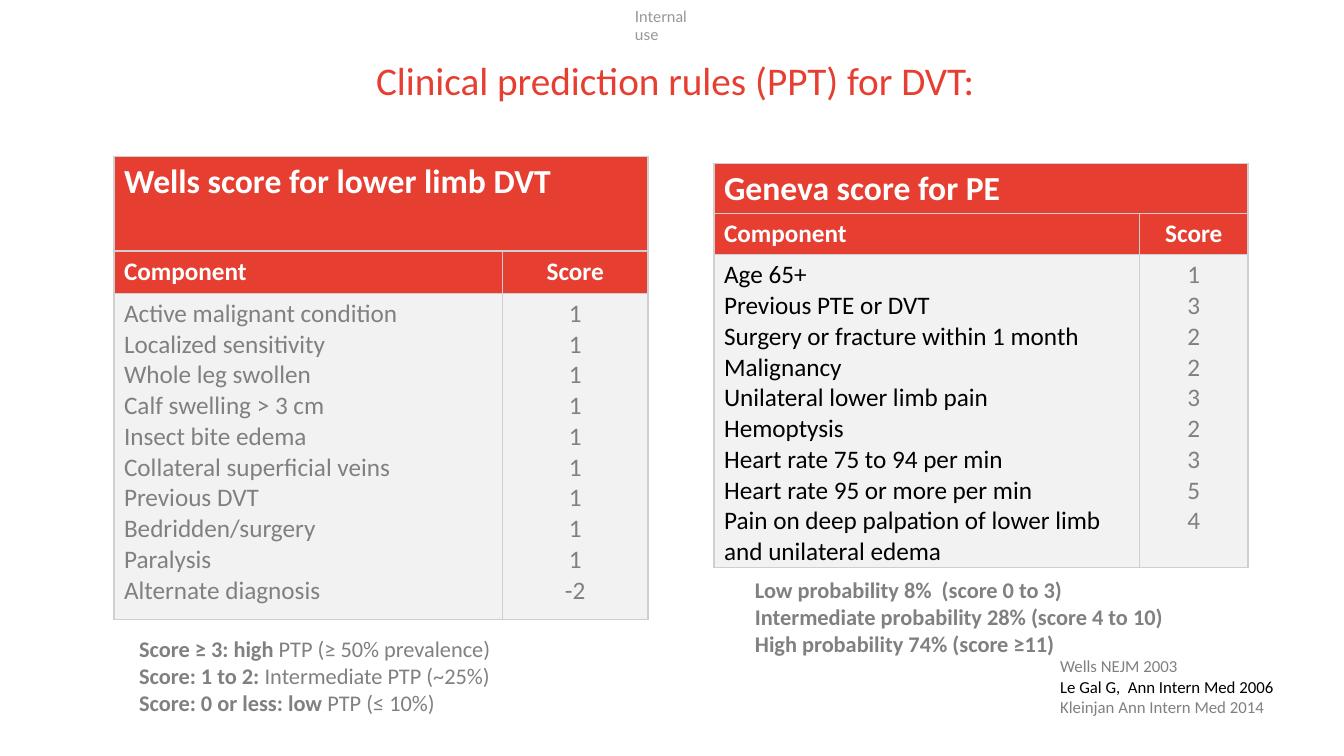
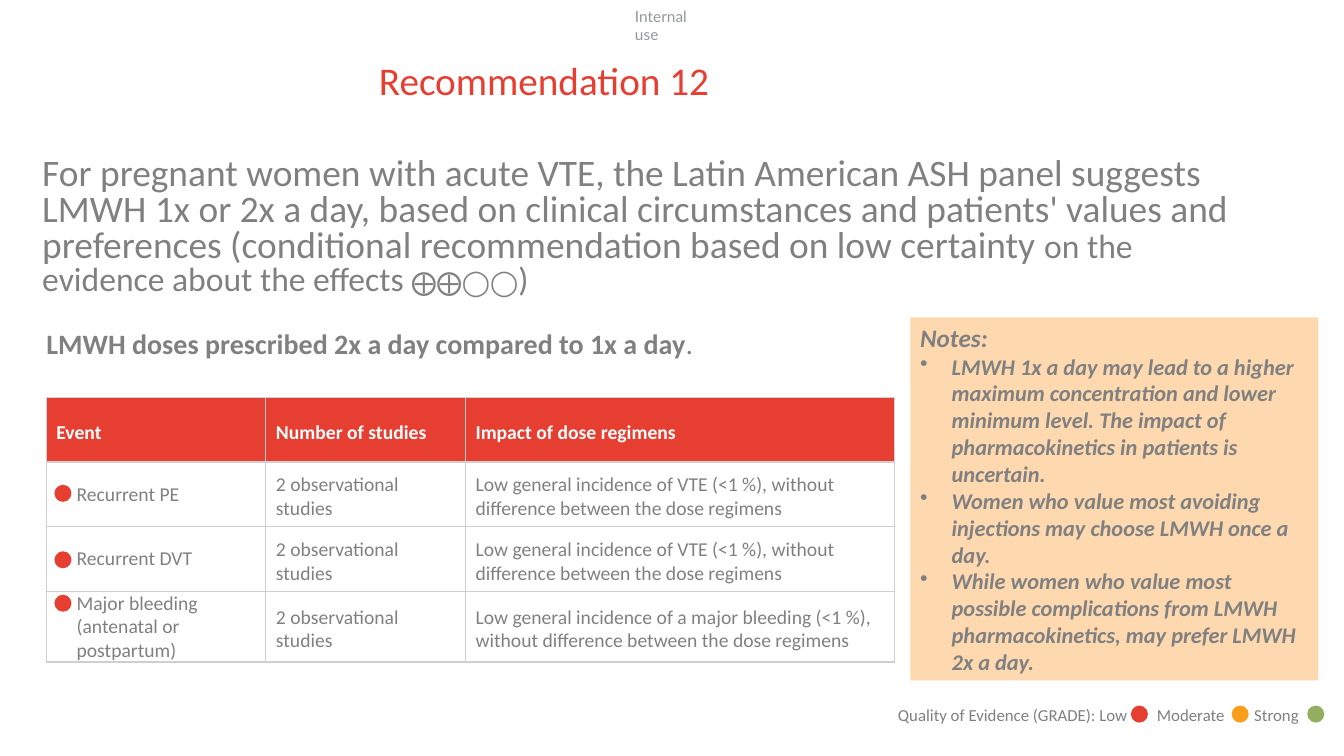
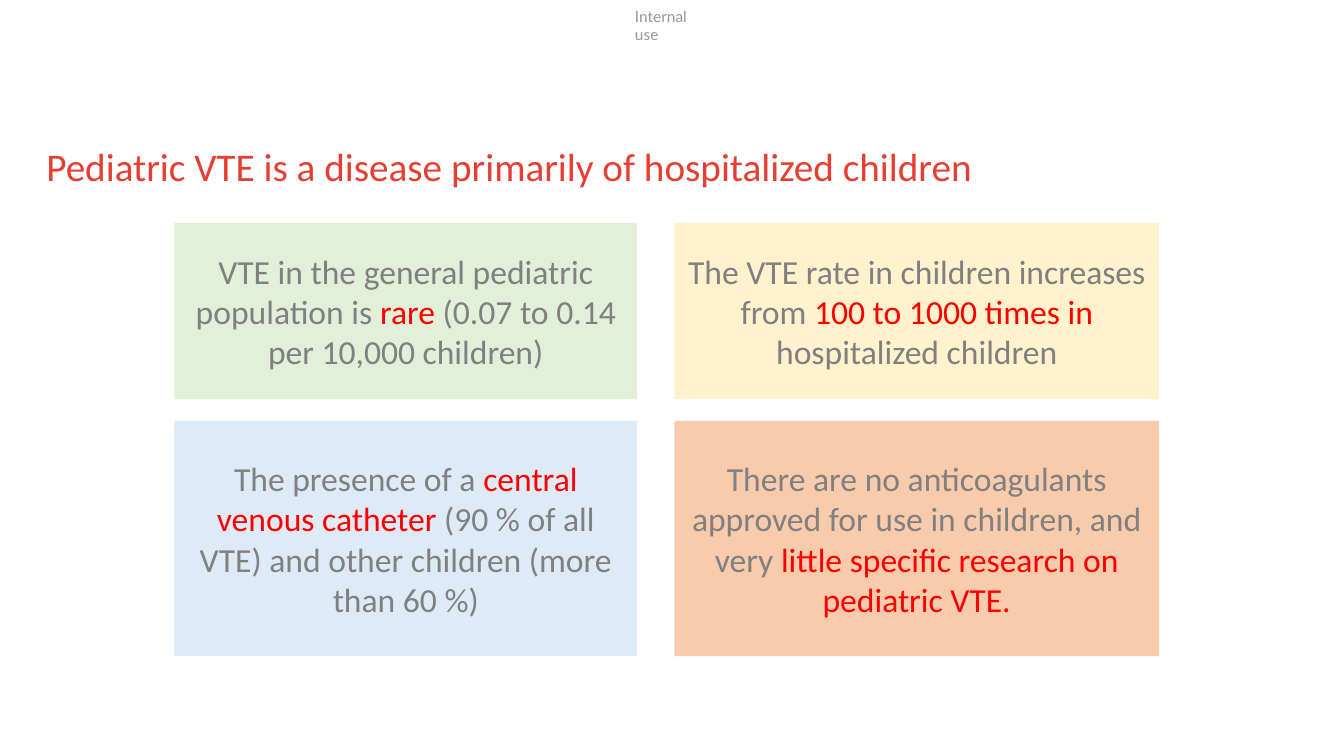
import dataclasses

import pptx
import pptx.dml.color
import pptx.enum.shapes
import pptx.enum.text
import pptx.oxml
import pptx.oxml.ns
import pptx.util

Pt = pptx.util.Pt
RGB = pptx.dml.color.RGBColor.from_string
ALIGN = pptx.enum.text.PP_ALIGN
ANCHOR = pptx.enum.text.MSO_ANCHOR
SHAPE = pptx.enum.shapes.MSO_SHAPE
NO_FIT = pptx.enum.text.MSO_AUTO_SIZE.NONE


# Theme: colours and type sizes
@dataclasses.dataclass(frozen=True)
class Theme:
    font: str = "Calibri"
    label_font: str = "Lato"
    red: str = "E63E31"
    grey: str = "808080"
    black: str = "000000"
    white: str = "FFFFFF"
    label_grey: str = "93979B"
    border: str = "D0CECE"
    panel: str = "F2F2F2"
    note: str = "FED9B0"
    accent: str = "FF0000"
    amber: str = "F99D1C"
    green: str = "91AF5F"
    mint: str = "E2F0D9"
    cream: str = "FFF2CC"
    sky: str = "DEEBF7"
    peach: str = "F8CBAD"
    label: float = 11
    small: float = 12
    cell: float = 14
    body: float = 16
    large: float = 18
    subhead: float = 20
    heading: float = 24
    lead: float = 26.7
    title: float = 28


THEME = Theme()
FLUSH = (0, 0, 0, 0)
INSET = (7.2, 3.6, 7.2, 3.6)
CELL_INSET = (7.2, 3.6, 7.2, 0)
DOT = 12.2


# Text
def set_format(target, values):
    for name, value in values.items():
        if name == "color":
            target.color.rgb = RGB(value)
        else:
            setattr(target, name, value)


def font(size, color=THEME.grey, **extra):
    return {"name": THEME.font, "size": Pt(size), "color": color, **extra}


def add_spans(para, spans, base):
    """Spans are plain strings or (string, format changes) pairs."""
    for item in [spans] if isinstance(spans, str) else spans:
        words, changes = (item, {}) if isinstance(item, str) else item
        span = para.add_run()
        span.text = words
        set_format(span.font, {**base, **changes})


def write(frame, paras, base, **para_format):
    for index, spans in enumerate(paras):
        para = frame.add_paragraph() if index else frame.paragraphs[0]
        set_format(para, para_format)
        add_spans(para, spans, base)


def set_insets(target, insets):
    sides = ("margin_left", "margin_top", "margin_right", "margin_bottom")
    set_format(target, dict(zip(sides, map(Pt, insets))))


def add_bullet(para, indent):
    properties = para._p.get_or_add_pPr()
    properties.set("marL", str(Pt(indent)))
    properties.set("indent", str(-Pt(indent)))
    bullet = pptx.oxml.parse_xml(
        f'<a:buChar {pptx.oxml.ns.nsdecls("a")} char="•"/>')
    properties.append(bullet)


def add_tabs(para, stops):
    tabs = "".join(f'<a:tab pos="{Pt(stop)}" algn="l"/>' for stop in stops)
    para._p.get_or_add_pPr().append(pptx.oxml.parse_xml(
        f'<a:tabLst {pptx.oxml.ns.nsdecls("a")}>{tabs}</a:tabLst>'))


# Elements
def add_text(page, place, paras, base, insets=FLUSH, **para_format):
    box = page.shapes.add_textbox(*map(Pt, place))
    box.text_frame.word_wrap = True
    set_insets(box.text_frame, insets)
    write(box.text_frame, paras, base, **para_format)
    return box


def add_title(page, place, words):
    title = page.shapes.title
    names = ("left", "top", "width", "height")
    set_format(title, dict(zip(names, map(Pt, place))))
    frame = title.text_frame
    set_format(frame, {"word_wrap": True, "auto_size": NO_FIT,
                       "vertical_anchor": ANCHOR.TOP})
    set_insets(frame, FLUSH)
    write(frame, [words], font(THEME.title, THEME.red),
          alignment=ALIGN.LEFT, line_spacing=0.9)


def add_block(page, kind, place, color):
    block = page.shapes.add_shape(kind, *map(Pt, place))
    block.shadow.inherit = False
    block.fill.solid()
    block.fill.fore_color.rgb = RGB(color)
    block.line.fill.background()
    block.text_frame.word_wrap = True
    return block


def add_dot(page, left, top, color):
    add_block(page, SHAPE.OVAL, (left, top, DOT, DOT), color)


def add_table(page, left, top, widths, heights):
    table = page.shapes.add_table(
        len(heights), len(widths), Pt(left), Pt(top),
        Pt(sum(widths)), Pt(sum(heights))).table
    set_format(table, {"first_row": False, "horz_banding": False})
    for column, width in zip(table.columns, widths):
        column.width = Pt(width)
    for row, height in zip(table.rows, heights):
        row.height = Pt(height)
    return table


def fill_cell(cell, paras, base, color=None, insets=CELL_INSET,
              anchor=ANCHOR.TOP, **para_format):
    properties = cell._tc.get_or_add_tcPr()
    for side in "LRTB":
        properties.append(pptx.oxml.parse_xml(
            f'<a:ln{side} {pptx.oxml.ns.nsdecls("a")} w="{Pt(1)}">'
            f'<a:solidFill><a:srgbClr val="{THEME.border}"/></a:solidFill>'
            f'</a:ln{side}>'))
    if color:
        cell.fill.solid()
        cell.fill.fore_color.rgb = RGB(color)
    else:
        cell.fill.background()
    set_insets(cell, insets)
    cell.vertical_anchor = anchor
    write(cell.text_frame, paras, base, **para_format)


def add_score_table(page, place, widths, heights, name, scores, color):
    table = add_table(page, *place, widths, heights)
    head = font(THEME.large, THEME.white, bold=True)
    top = table.cell(0, 0)
    top.merge(table.cell(0, 1))
    fill_cell(top, [name], {**head, "size": Pt(THEME.heading)}, THEME.red)
    columns = (("Component", [row[0] for row in scores], color, ALIGN.LEFT),
               ("Score", [row[1] for row in scores], THEME.grey, ALIGN.CENTER))
    for index, (label, values, ink, align) in enumerate(columns):
        fill_cell(table.cell(1, index), [label], head, THEME.red,
                  alignment=align)
        fill_cell(table.cell(2, index), values, font(THEME.large, ink),
                  THEME.panel, alignment=align)


def add_layout_label(page):
    """Put the classification label on the layout that all pages share."""
    base = {**font(THEME.label, THEME.label_grey), "name": THEME.label_font}
    label = add_text(page, (453.6, 5, 50, 28), ["Internal use"], base).element
    label.nvSpPr.cNvPr.set("id", "20")
    page.slide_layout.shapes.element.append(label)


# Pages
def build_scores(page):
    add_title(page, (268.6, 44, 660, 33),
              "Clinical prediction rules (PPT) for DVT:")
    geneva = [("Age 65+", "1"), ("Previous PTE or DVT", "3"),
              ("Surgery or fracture within 1 month", "2"),
              ("Malignancy", "2"), ("Unilateral lower limb pain", "3"),
              ("Hemoptysis", "2"), ("Heart rate 75 to 94 per min", "3"),
              ("Heart rate 95 or more per min", "5"),
              ("Pain on deep palpation of lower limb and unilateral edema",
               "4")]
    wells = [(name, "1") for name in (
        "Active malignant condition", "Localized sensitivity",
        "Whole leg swollen", "Calf swelling > 3 cm", "Insect bite edema",
        "Collateral superficial veins", "Previous DVT", "Bedridden/surgery",
        "Paralysis")] + [("Alternate diagnosis", "-2")]
    add_score_table(page, (81.4, 111.6), (277.5, 104), (67.7, 30.2, 233.3),
                    "Wells score for lower limb DVT", wells, THEME.grey)
    add_score_table(page, (510, 116.8), (304, 77.5), (36, 29.2, 223),
                    "Geneva score for PE", geneva, THEME.black)

    # Score readings and references
    strong = {"bold": True}
    add_text(page, (99.4, 453.6, 346, 58.5), [
        [("Score ≥ 3: high", strong), " PTP (≥ 50% prevalence)"],
        [("Score: 1 to 2: ", strong), "Intermediate PTP (~25%)"],
        [("Score: 0 or less: low ", strong), "PTP (≤ 10%)"],
    ], font(THEME.body))
    add_text(page, (539.3, 411.8, 376, 58.5), [
        "Low probability 8%  (score 0 to 3)",
        "Intermediate probability 28% (score 4 to 10)",
        "High probability 74% (score ≥11)",
    ], font(THEME.body, bold=True))
    add_text(page, (750.2, 465.1, 199.4, 51), [
        "Wells NEJM 2003",
        [("Le Gal G,  Ann Intern Med 2006", {"color": THEME.black})],
        "Kleinjan Ann Intern Med 2014",
    ], font(THEME.small), INSET)


def build_recommendation(page):
    add_title(page, (270.7, 44, 371, 33), "Recommendation 12")
    smaller = {"size": Pt(THEME.heading)}
    add_text(page, (30.2, 113, 864, 103.7), [[
        "For pregnant women with acute VTE, the Latin American ASH panel "
        "suggests LMWH 1x or 2x a day, based on clinical circumstances and "
        "patients' values and preferences (conditional recommendation based "
        "on low certainty",
        (" on the evidence about the effects ", smaller),
        ("⨁⨁◯◯", {"size": Pt(THEME.large)}), (")", smaller),
    ]], font(THEME.lead), line_spacing=0.8)
    add_text(page, (33.1, 233.3, 600, 24.5), [[
        ("LMWH doses prescribed 2x a day compared to 1x a day",
         {"bold": True}), "."]], font(THEME.subhead))

    # Dose table
    low_vte = ("Low general incidence of VTE (<1 %), without difference "
               "between the dose regimens")
    low_bleeding = ("Low general incidence of a major bleeding (<1 %), "
                    "without difference between the dose regimens")
    studies = "2 observational studies"
    rows = [("Event", "Number of studies", "Impact of dose regimens"),
            ("Recurrent PE", studies, low_vte),
            ("Recurrent DVT", studies, low_vte),
            ("Major bleeding (antenatal or postpartum)", studies,
             low_bleeding)]
    table = add_table(page, 33.1, 283.9, (156.8, 142.6, 306.7),
                      (46.2, 46.2, 46.2, 50))
    for row, values in enumerate(rows):
        base = font(THEME.cell) if row else font(
            THEME.cell, THEME.white, bold=True)
        for column, words in enumerate(values):
            beside_dot = row and not column
            fill_cell(table.cell(row, column), [words], base,
                      None if row else THEME.red,
                      (21.6, 0, 0, 0) if beside_dot else CELL_INSET,
                      ANCHOR.MIDDLE)
    for top in (346.3, 393.8, 424.8):
        add_dot(page, 38.9, top, THEME.red)

    # Notes
    notes = add_block(page, SHAPE.RECTANGLE, (650.2, 226.8, 291.6, 259.2),
                      THEME.note).text_frame
    notes.vertical_anchor = ANCHOR.TOP
    base = font(THEME.body, bold=True, italic=True)
    write(notes, [
        [("Notes:", {"size": Pt(THEME.large)})],
        "LMWH 1x a day may lead to a higher maximum concentration and lower "
        "minimum level. The impact of pharmacokinetics in patients is "
        "uncertain.",
        "Women who value most avoiding injections may choose LMWH once a "
        "day.",
        "While women who value most possible complications from LMWH "
        "pharmacokinetics, may prefer LMWH 2x a day.",
    ], base, alignment=ALIGN.LEFT)
    for para in notes.paragraphs[1:]:
        add_bullet(para, 22.5)

    # Evidence legend
    legend = add_text(page, (634.3, 499.7, 325, 21.6), [
        "Quality of Evidence (GRADE): Low\tModerate\tStrong",
    ], font(THEME.small), INSET)
    add_tabs(legend.text_frame.paragraphs[0], (185, 254.5))
    for left, color in ((807.8, THEME.red), (879.8, THEME.amber),
                        (933.8, THEME.green)):
        add_dot(page, left, 504, color)


def build_pediatric(page):
    add_title(page, (33.1, 105.8, 910, 33),
              "Pediatric VTE is a disease primarily of hospitalized children")
    accent = {"color": THEME.accent}
    columns = ((124.6, 330.5), (481.7, 346.3))
    rows = ((159.1, 126), (300.6, 168))
    tiles = [
        (THEME.mint, ["VTE in the general pediatric population is ",
                      ("rare", accent),
                      " (0.07 to 0.14 per 10,000 children)"]),
        (THEME.cream, ["The VTE rate in children increases from ",
                       ("100 to 1000 times in ", accent),
                       "hospitalized children"]),
        (THEME.sky, ["The presence of a ",
                     ("central venous catheter ", accent),
                     "(90 % of all VTE) and other children "
                     "(more than 60 %)"]),
        (THEME.peach, ["There are no anticoagulants approved for use in "
                       "children, and very",
                       (" little specific research on pediatric VTE.",
                        accent)]),
    ]
    for index, (color, spans) in enumerate(tiles):
        left, width = columns[index % 2]
        top, height = rows[index // 2]
        tile = add_block(page, SHAPE.RECTANGLE, (left, top, width, height),
                         color)
        tile.text_frame.vertical_anchor = ANCHOR.MIDDLE
        write(tile.text_frame, [spans], font(THEME.heading),
              alignment=ALIGN.CENTER)


def main():
    deck = pptx.Presentation()
    deck.slide_width, deck.slide_height = Pt(960), Pt(540)
    title_only = deck.slide_layouts[5]
    builders = (build_scores, build_recommendation, build_pediatric)
    for index, build in enumerate(builders):
        page = deck.slides.add_slide(title_only)
        if index == 0:
            add_layout_label(page)
        build(page)
    deck.save("out.pptx")


if __name__ == "__main__":
    main()
